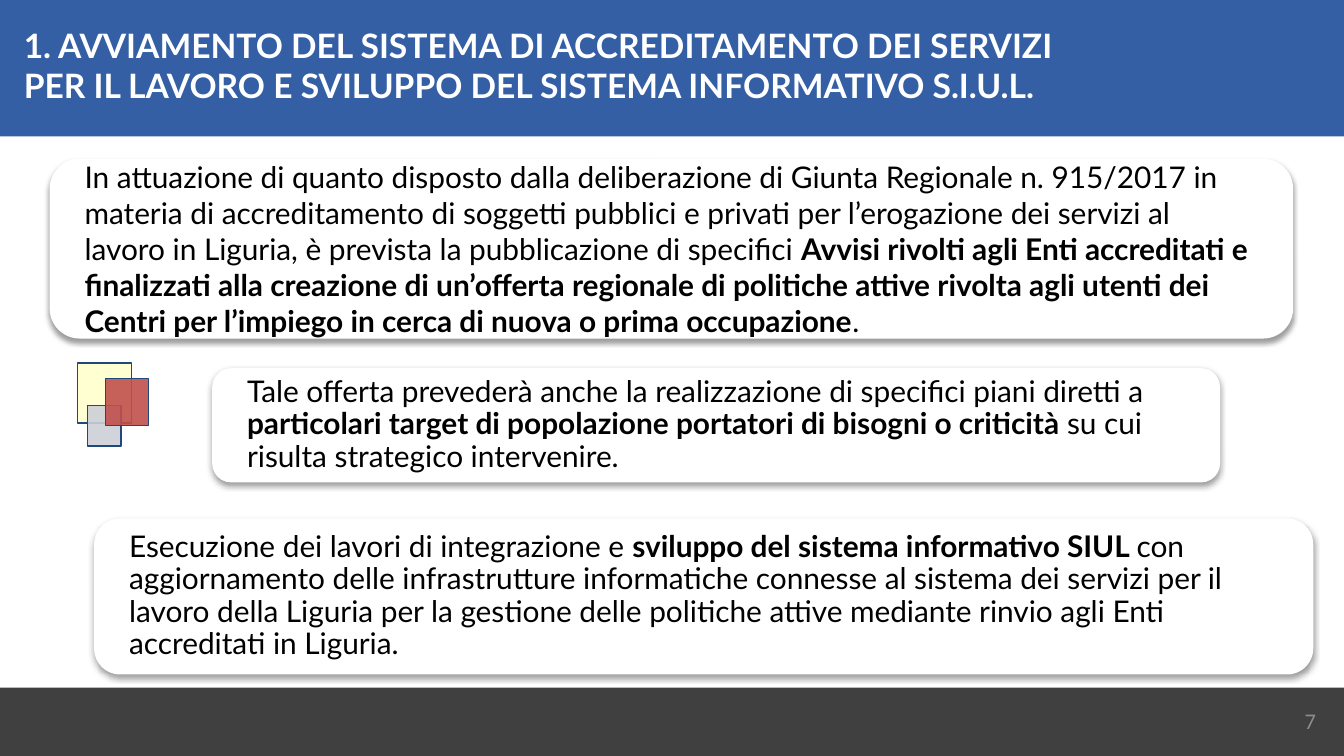
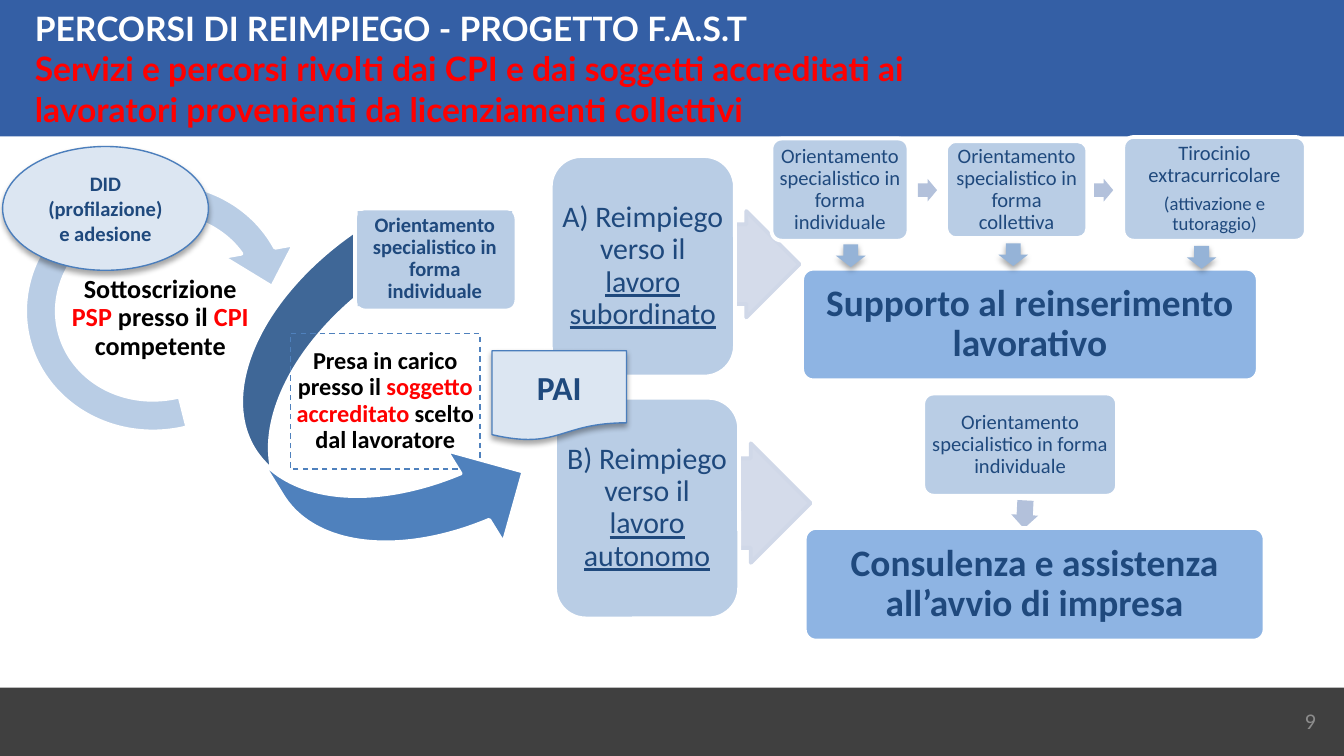
from dataclasses import dataclass

from lxml.etree import SubElement
from pptx import Presentation
from pptx.dml.color import RGBColor
from pptx.enum.dml import MSO_LINE
from pptx.enum.shapes import MSO_SHAPE as Kind
from pptx.enum.text import MSO_ANCHOR as Anchor, PP_ALIGN as Align
from pptx.oxml.ns import qn
from pptx.util import Cm, Pt

COLORS = {
    "white": "FFFFFF", "black": "000000", "red": "FF0000",
    "header": "345FA5", "footer": "404040", "number": "8C8C8C",
    "navy": "1F497D", "blue": "4F81BD", "outline": "4B7EBC",
    "pale": "DCE6F2", "card": "B9CDE5", "target": "8EB4E3",
    "step": "B3C1DB", "drop": "95B3D7", "choice_arrow": "D0D8E8",
    "yellow": "FFFFCC", "grey": "CDD0D7", "brick": "C0504D",
}
BOLD = {"bold": True}
RED = {"color": "red"}
UNDERLINED = {"underline": True}

TITLE = {"name": "Lato", "size": Pt(18), "bold": True, "color": "white"}
NUMBER = {"name": "Calibri", "size": Pt(12), "color": "number"}
NOTE = {"name": "Lato", "size": Pt(16), "color": "black"}
CARD = {"name": "Calibri", "size": Pt(11), "color": "navy"}
CARD_BOLD = {**CARD, "bold": True}
CHOICE = {**CARD, "size": Pt(16)}
TARGET = {**CARD_BOLD, "size": Pt(20)}
PAI = {**CARD_BOLD, "size": Pt(18)}
CYCLE = {**CARD_BOLD, "size": Pt(14), "color": "black"}
INTAKE = {**CYCLE, "size": Pt(13)}

WHITE_EDGE = ("white", 2)
NAVY_EDGE = ("navy", 0.75)
BLUE_EDGE = ("outline", 0.75)
NOTE_SHADOW = (38, 1.6)
SHAPE_SHADOW = (35, 1.8)
SMALL_CORNER = (0.1,)
STEP_HEAD = (0.6, 0.5)
ORIENTATION = "Orientamento specialistico in forma "


@dataclass
class Box:
    left: float
    top: float
    width: float
    height: float

    def inside(self, left, top, width, height):
        """Box whose corner is measured from the corner of this one."""
        return Box(self.left + left, self.top + top, width, height)

    def lengths(self):
        return [Cm(n) for n in (self.left, self.top, self.width, self.height)]


def color(name):
    return RGBColor.from_string(COLORS[name])


def apply(target, values):
    for name, value in values.items():
        if name == "color":
            target.color.rgb = color(value)
        else:
            setattr(target, name, value)


def add_shadow(shape, opacity, distance):
    effects = shape._element.spPr.find(qn("a:effectLst"))
    outer = SubElement(effects, qn("a:outerShdw"), blurRad=str(Pt(3.1)),
                       dist=str(Pt(distance)), dir="5400000", rotWithShape="0")
    black = SubElement(outer, qn("a:srgbClr"), val=COLORS["black"])
    SubElement(black, qn("a:alpha"), val=str(opacity * 1000))


def add_figure(slide, kind, box, fill=None, edge=None, shadow=None,
               adjust=(), rotation=0, opacity=100):
    shape = slide.shapes.add_shape(kind, *box.lengths())
    shape.shadow.inherit = False
    shape.rotation = rotation
    for index, value in enumerate(adjust):
        shape.adjustments[index] = value
    if fill:
        shape.fill.solid()
        shape.fill.fore_color.rgb = color(fill)
        if opacity < 100:
            tint = shape._element.spPr.find(qn("a:solidFill"))[0]
            SubElement(tint, qn("a:alpha"), val=str(opacity * 1000))
    else:
        shape.fill.background()
    if edge:
        apply(shape.line, {"color": edge[0], "width": Pt(edge[1])})
    else:
        shape.line.fill.background()
    if shadow:
        add_shadow(shape, *shadow)
    return shape


def write(shape, paragraphs, style, inset=(0.25, 0.13), align=Align.CENTER, spacing=0.9):
    """Fill a shape; each paragraph lists plain strings or (text, changes) pairs."""
    frame = shape.text_frame
    across, down = (Cm(n) for n in inset)
    apply(frame, {"word_wrap": True, "vertical_anchor": Anchor.MIDDLE,
                  "margin_left": across, "margin_right": across,
                  "margin_top": down, "margin_bottom": down})
    for index, runs in enumerate(paragraphs):
        paragraph = frame.add_paragraph() if index else frame.paragraphs[0]
        apply(paragraph, {"alignment": align, "line_spacing": spacing})
        if index:
            paragraph.space_before = Pt(4)
        for item in runs:
            text, changes = (item, {}) if isinstance(item, str) else item
            if text == "\n":
                paragraph.add_line_break()
                continue
            run = paragraph.add_run()
            run.text = text
            apply(run.font, {**style, **changes})


def write_rounded(shape, box, paragraphs, style, inset, **layout):
    """Write with insets measured from the outer edges, not the rounded corners."""
    corner = 0.29 * shape.adjustments[0] * min(box.width, box.height)
    write(shape, paragraphs, style, [max(0, n - corner) for n in inset], **layout)


def add_text(slide, box, paragraphs, style, **layout):
    write(slide.shapes.add_textbox(*box.lengths()), paragraphs, style, **layout)


def add_frame(slide, title, title_box, number):
    """Header and footer bands, title and slide number."""
    add_figure(slide, Kind.RECTANGLE, Box(0, 13, 25.4, 1.29), "footer")
    add_figure(slide, Kind.RECTANGLE, Box(0, 0, 25.6, 2.58), "header")
    add_text(slide, title_box, [title], TITLE, align=Align.LEFT, spacing=1.0)
    add_text(slide, Box(17.22, 13.24, 7.9, 0.76), [[number]], NUMBER,
             align=Align.RIGHT, spacing=1.0)


def add_note(slide, box, runs, spacing=0.9):
    shape = add_figure(slide, Kind.ROUNDED_RECTANGLE, box, "white", shadow=NOTE_SHADOW)
    write_rounded(shape, box, [runs], NOTE, (0.66, 0), align=Align.LEFT, spacing=spacing)


def add_squares(slide, box):
    for fill, place in (("yellow", (0, 0, 1.02, 1.14)),
                        ("grey", (0.18, 0.81, 0.64, 0.76)),
                        ("brick", (0.53, 0.3, 0.81, 0.89))):
        add_figure(slide, Kind.RECTANGLE, box.inside(*place), fill, NAVY_EDGE, opacity=90)


def add_card(slide, box, paragraphs, fill="card", style=CARD, inset=0.13):
    shape = add_figure(slide, Kind.ROUNDED_RECTANGLE, box, fill, WHITE_EDGE,
                       adjust=SMALL_CORNER)
    write_rounded(shape, box, paragraphs, style, (inset, inset))


def add_target(slide, box, text):
    add_card(slide, box, [[text]], "target", TARGET, 0.2)


def add_cycle(slide, box):
    add_figure(slide, Kind.CIRCULAR_ARROW, box.inside(0.25, 0.15, 5.44, 5.77), "card",
               WHITE_EDGE, adjust=(0.11, 11.423, 45, 108, 0.125), rotation=255.9)
    add_text(slide, box.inside(1.24, 2.08, 3.58, 2.34),
             [["Sottoscrizione ", ("PSP", RED), " presso il ", ("CPI", RED),
               " competente"]], CYCLE, inset=(0.03, 0.03))
    start = add_figure(slide, Kind.OVAL, box.inside(0.05, 0, 3.89, 2.34), "pale",
                       BLUE_EDGE, SHAPE_SHADOW)
    write(start, [["DID (profilazione) e adesione"]], CARD_BOLD, spacing=1.0)


def add_choice(slide, box, arrow_place, lead, goal):
    add_figure(slide, Kind.RIGHT_ARROW, box.inside(*arrow_place), "choice_arrow",
               ("choice_arrow", 2), adjust=(0.75, 0.5), opacity=90)
    shape = add_figure(slide, Kind.ROUNDED_RECTANGLE, box, "card", WHITE_EDGE)
    write_rounded(shape, box, [[lead, (goal, UNDERLINED)]], CHOICE, (0.18, 0.08))


def add_intake(slide, box):
    add_figure(slide, Kind.CURVED_RIGHT_ARROW, box.inside(0, 0.84, 4.11, 6.58), "blue",
               WHITE_EDGE, rotation=328.3)
    frame = add_figure(slide, Kind.RECTANGLE, box.inside(0.59, 2.36, 3.58, 2.57),
                       edge=("blue", 0.75))
    frame.line.dash_style = MSO_LINE.DASH
    write(frame, [["Presa in carico presso il ", ("soggetto accreditato ", RED),
                   "scelto dal lavoratore"]], INTAKE, (0.03, 0.03))
    add_figure(slide, Kind.ROUNDED_RECTANGLE, box.inside(1.81, 0, 3.05, 1.93), "card",
               WHITE_EDGE, adjust=SMALL_CORNER)
    label = add_figure(slide, Kind.RECTANGLE, box.inside(1.86, 0.05, 2.92, 1.8), "card")
    write(label, [[ORIENTATION + "individuale"]], CARD_BOLD, (0.13, 0.13))
    plan = add_figure(slide, Kind.FLOWCHART_DOCUMENT, box.inside(4.4, 2.69, 2.54, 1.7),
                      "pale", BLUE_EDGE, SHAPE_SHADOW)
    write(plan, [["PAI"]], PAI, spacing=1.0)


def add_employee_route(slide, box):
    cards = (
        ((0, 0.03, 2.59, 1.93), [[ORIENTATION + "individuale"]]),
        ((3.3, 0.08, 2.67, 1.83), [[ORIENTATION + "collettiva"]]),
        ((6.65, 0, 3.45, 1.96), [["Tirocinio extracurricolare"],
                                 [("(attivazione e tutoraggio)", {"size": Pt(10)})]]),
    )
    for place, paragraphs in cards:
        add_card(slide, box.inside(*place), paragraphs)
    for left in (2.77, 6.1):
        add_figure(slide, Kind.RIGHT_ARROW, box.inside(left, 0.79, 0.36, 0.43), "step",
                   adjust=STEP_HEAD)
    add_target(slide, box.inside(0.58, 2.49, 8.61, 2.11),
               "Supporto al reinserimento lavorativo")
    for left, top in ((1.22, 2.03), (4.29, 2.01), (7.85, 2.06)):
        add_figure(slide, Kind.DOWN_ARROW, box.inside(left, top, 0.56, 0.43), "drop",
                   shadow=SHAPE_SHADOW)


def add_business_route(slide, box):
    add_card(slide, box.inside(2.24, 0, 3.66, 1.93), [[ORIENTATION + "individuale"]])
    add_figure(slide, Kind.RIGHT_ARROW, box.inside(3.89, 2.03, 0.53, 0.51), "step",
               adjust=STEP_HEAD, rotation=93)
    add_target(slide, box.inside(0, 2.54, 8.69, 2.13),
               "Consulenza e assistenza all’avvio di impresa")


def build_accreditation(slide):
    add_frame(slide, ["1. AVVIAMENTO DEL SISTEMA DI ACCREDITAMENTO DEI SERVIZI PER IL "
                      "LAVORO E SVILUPPO DEL SISTEMA INFORMATIVO S.I.U.L."],
              Box(0.2, 0.25, 20.93, 1.96), "7")
    add_squares(slide, Box(1.47, 6.86, 1.34, 1.57))
    add_note(slide, Box(0.94, 3, 23.5, 3.4), [
        "In attuazione di quanto disposto dalla deliberazione di Giunta Regionale "
        "n. 915/2017 in materia di accreditamento di soggetti pubblici e privati per "
        "l’erogazione dei servizi al lavoro in Liguria, è prevista la pubblicazione "
        "di specifici ",
        ("Avvisi rivolti agli Enti accreditati e finalizzati alla creazione di "
         "un’offerta regionale di politiche attive rivolta agli utenti dei Centri per "
         "l’impiego in cerca di nuova o prima occupazione", BOLD), "."], spacing=1.0)
    add_note(slide, Box(4.01, 6.96, 19.05, 2.16), [
        "Tale offerta prevederà anche la realizzazione di specifici piani diretti a ",
        ("particolari target di popolazione portatori di bisogni o criticità ", BOLD),
        "su cui risulta strategico intervenire."])
    add_note(slide, Box(1.78, 9.8, 23.04, 2.95), [
        "Esecuzione dei lavori di integrazione e ",
        ("sviluppo del sistema informativo SIUL ", BOLD),
        "con aggiornamento delle infrastrutture informatiche connesse al sistema dei "
        "servizi per il lavoro della Liguria per la gestione delle politiche attive "
        "mediante rinvio agli Enti accreditati in Liguria."])


def build_reemployment(slide):
    add_frame(slide, ["PERCORSI DI REIMPIEGO - PROGETTO F.A.S.T", "\n",
                      ("Servizi e percorsi rivolti dai CPI e dai soggetti accreditati "
                       "ai lavoratori provenienti da licenziamenti collettivi", RED)],
              Box(0.41, 0.56, 19.08, 1.47), "9")
    add_cycle(slide, Box(0, 2.77, 5.7, 5.92))
    add_choice(slide, Box(10.41, 2.95, 3.48, 4.17), (1.4, 1.04, 3.3, 2.01),
               "A) Reimpiego verso il ", "lavoro subordinato")
    add_choice(slide, Box(10.49, 7.52, 3.48, 4.17), (1.73, 0.86, 3.1, 2.26),
               "B) Reimpiego verso il ", "lavoro autonomo")
    add_intake(slide, Box(4.9, 3.94, 6.94, 7.42))
    add_employee_route(slide, Box(14.58, 2.59, 10.1, 4.6))
    add_business_route(slide, Box(15.21, 7.44, 8.69, 4.67))


def main():
    presentation = Presentation()
    apply(presentation, {"slide_width": Cm(25.4), "slide_height": Cm(14.29)})
    blank = presentation.slide_layouts[6]
    for build in (build_accreditation, build_reemployment):
        build(presentation.slides.add_slide(blank))
    presentation.save("out.pptx")


if __name__ == "__main__":
    main()
